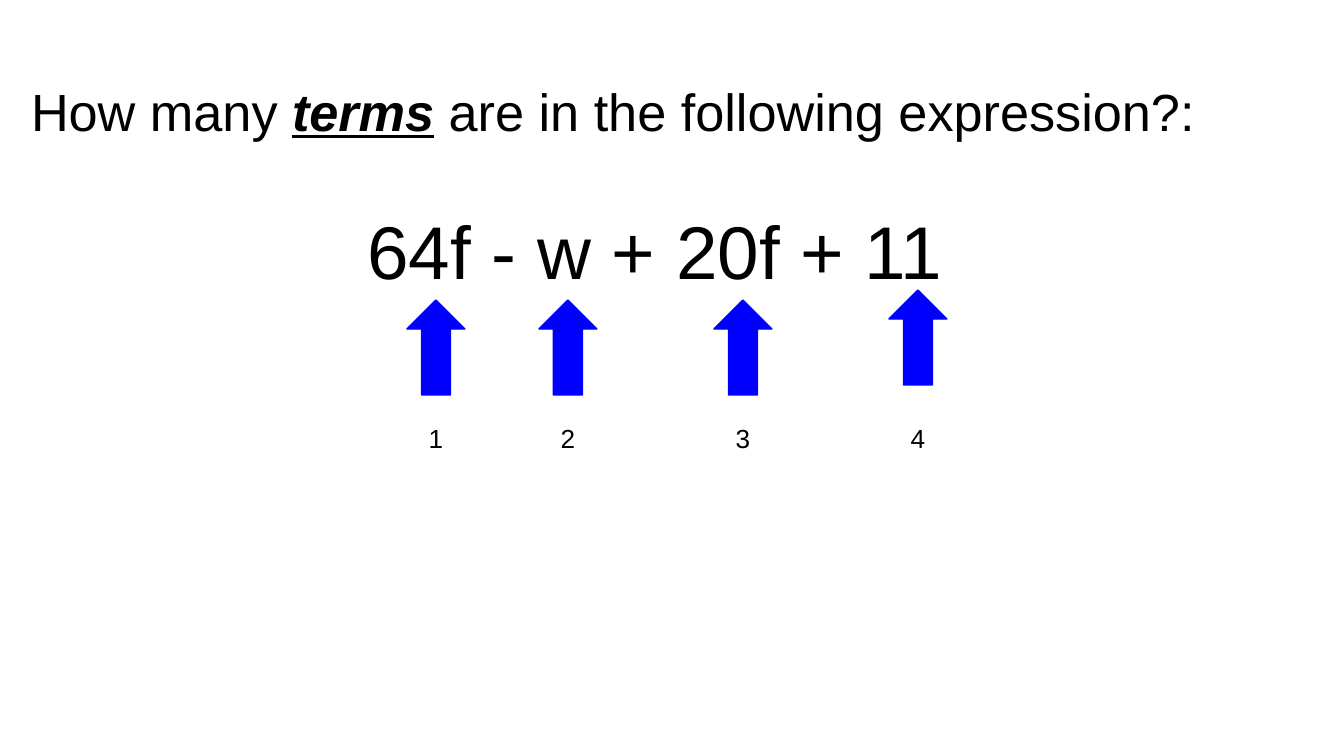
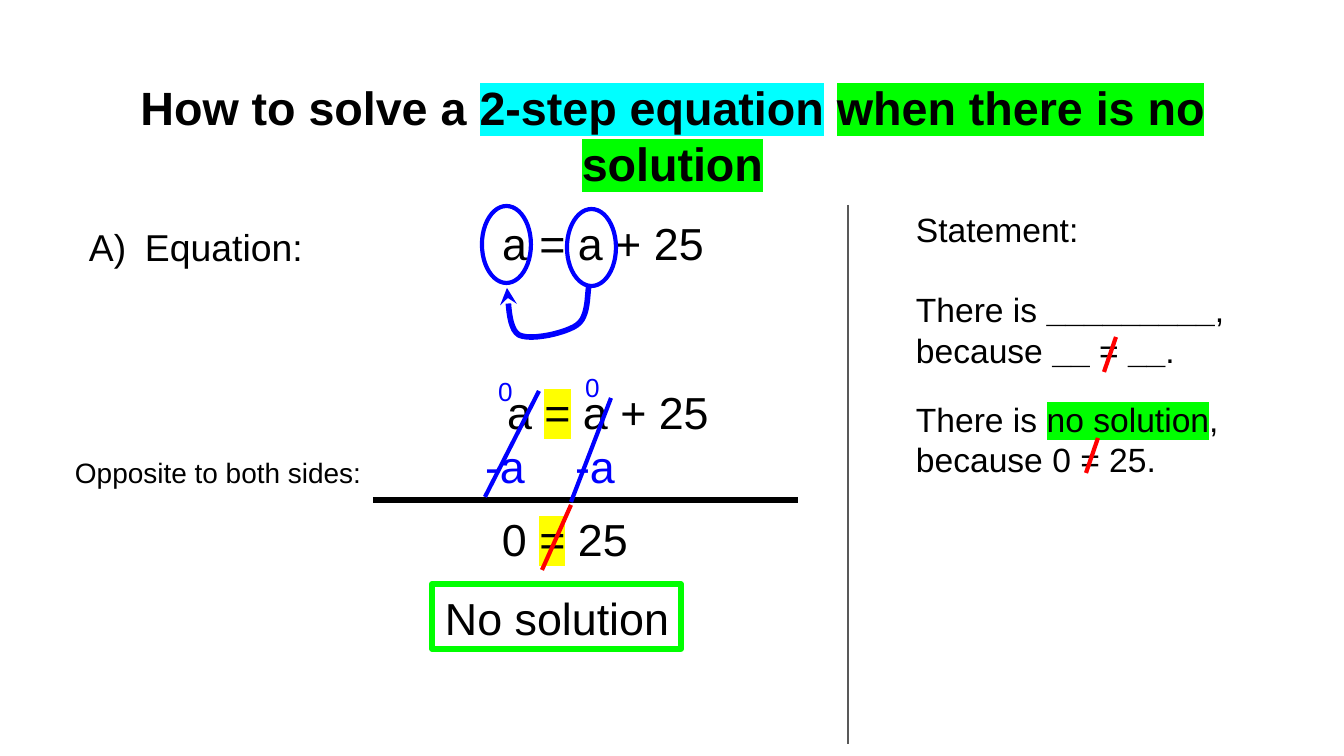
import pptx
import pptx.dml.color
import pptx.enum.shapes
import pptx.enum.text
import pptx.oxml
import pptx.oxml.ns
import pptx.util
from lxml import etree

EMU_PER_PX = 914400 / 134.4
FONT = "Arial"
LINE_SPACING = 1.0
INSET = 13
COLORS = {
    "ink": "000000", "blue": "0000FF", "red": "FF0000", "green": "00FF00",
    "cyan": "00FFFF", "yellow": "FFFF00", "gray": "595959", "paper": "FFFFFF",
}
SHAPES = pptx.enum.shapes.MSO_SHAPE
CENTER = pptx.enum.text.PP_ALIGN.CENTER


def px(length):
    return pptx.util.Emu(round(length * EMU_PER_PX))


def rgb(name):
    return pptx.dml.color.RGBColor.from_string(COLORS[name])


def add_xml(parent, tag, **attributes):
    return etree.SubElement(parent, pptx.oxml.ns.qn(tag), attributes)


# Text
def highlight_run(run, name):
    highlight = etree.Element(pptx.oxml.ns.qn("a:highlight"))
    add_xml(highlight, "a:srgbClr", val=COLORS[name])
    run.font.fill._xPr.find(pptx.oxml.ns.qn("a:solidFill")).addnext(highlight)


def add_run(paragraph, words, size=24, color="ink", bold=False, italic=False,
            underline=False, highlight=None):
    run = paragraph.add_run()
    run.text = words
    font = run.font
    font.name, font.size = FONT, pptx.util.Pt(size)
    font.bold, font.italic, font.underline = bold, italic, underline
    font.color.rgb = rgb(color)
    if highlight:
        highlight_run(run, highlight)


def add_text(slide, box, *paragraphs, align=None, gap=0, inset=INSET,
             lettered=False, **style):
    """Each paragraph is a string or a list of strings and (string, style) pairs."""
    frame = slide.shapes.add_textbox(*map(px, box)).text_frame
    frame.word_wrap = True
    frame.margin_left = frame.margin_right = px(inset)
    frame.margin_top = frame.margin_bottom = px(inset)
    for index, runs in enumerate(paragraphs):
        paragraph = frame.add_paragraph() if index else frame.paragraphs[0]
        paragraph.line_spacing = LINE_SPACING
        paragraph.alignment = CENTER if align == "center" or (align == "last" and index) else None
        if index:
            paragraph.space_before = px(gap)
        if lettered:
            properties = paragraph._p.get_or_add_pPr()
            properties.set("marL", str(px(67)))
            properties.set("indent", str(px(-56)))
            add_xml(properties, "a:buAutoNum", type="alphaUcParenR")
        for part in [runs] if isinstance(runs, str) else runs:
            words, own = (part, {}) if isinstance(part, str) else part
            add_run(paragraph, words, **{**style, **own})


# Lines and outlines
def add_line(slide, start, end, color, width=2.25):
    line = slide.shapes.add_connector(
        pptx.enum.shapes.MSO_CONNECTOR.STRAIGHT, *map(px, start + end))
    line.line.color.rgb = rgb(color)
    line.line.width = pptx.util.Pt(width)
    add_xml(line._element.spPr, "a:effectLst")


def dress(shape, color, width, fill=None):
    shape.shadow.inherit = False
    if fill:
        shape.fill.solid()
        shape.fill.fore_color.rgb = rgb(fill)
    else:
        shape.fill.background()
    shape.line.color.rgb = rgb(color)
    shape.line.width = pptx.util.Pt(width)


def add_outline(slide, kind, box, color, width, fill=None):
    dress(slide.shapes.add_shape(kind, *map(px, box)), color, width, fill)


def curve_points(start, curves, steps=12):
    for first, second, end in curves:
        for step in range(1, steps + 1):
            t = step / steps
            weights = (1 - t) ** 3, 3 * t * (1 - t) ** 2, 3 * t * t * (1 - t), t ** 3
            corners = start, first, second, end
            yield tuple(px(sum(w * c[axis] for w, c in zip(weights, corners)))
                        for axis in (0, 1))
        start = end


def add_curved_arrow(slide, start, curves, color, width):
    builder = slide.shapes.build_freeform(px(start[0]), px(start[1]))
    builder.add_line_segments(list(curve_points(start, curves)), close=False)
    arrow = builder.convert_to_shape()
    dress(arrow, color, width)
    add_xml(arrow.line._get_or_add_ln(), "a:tailEnd", type="stealth")


def add_slide(deck):
    slide = deck.slides.add_slide(deck.slide_layouts[6])
    slide.background.fill.solid()
    slide.background.fill.fore_color.rgb = rgb("paper")
    return slide


# Slide 1: counting terms
def build_terms(deck):
    slide = add_slide(deck)
    add_text(
        slide, (18, 66, 1274, 153),
        ["How many ", ("terms", dict(bold=True, italic=True, underline=True)),
         " are in the following expression?:"],
        [("64f - w + 20f + 11", dict(size=40))],
        size=28, align="last", gap=63)
    term_marks = [(407, 300), (539, 300), (714, 300), (889, 290)]
    for left, top in term_marks:
        add_outline(slide, SHAPES.UP_ARROW, (left, top, 58, 95), "blue", 0.75, "blue")
    for number, (left, _) in enumerate(term_marks, 1):
        add_text(slide, (left, 409, 58, 62), str(number), size=14, align="center")


# Slide 2: equation without a solution
def build_no_solution(deck):
    slide = add_slide(deck)
    equals = ("=", dict(highlight="yellow"))
    add_text(
        slide, (46, 66, 1253, 155),
        ["How to solve a ", ("2-step equation", dict(highlight="cyan")), " ",
         ("when there is no solution", dict(highlight="green"))],
        size=25, bold=True, align="center")

    # Equation with the variable moved across
    add_text(slide, (65, 211, 400, 76), "Equation:", size=20, lettered=True)
    add_text(slide, (489, 203, 350, 83), "a = a + 25")
    for left, top in [(482, 206), (567, 209)]:
        add_outline(slide, SHAPES.OVAL, (left, top, 49, 77), "blue", 2.25)
    add_curved_arrow(
        slide, (589, 286),
        [((587, 293), (589, 317), (577, 325)),
         ((566, 333), (531, 341), (519, 335)),
         ((507, 328), (509, 296), (507, 288))],
        "blue", 3)

    # Subtraction on both sides
    add_text(slide, (494, 372, 350, 77), ["a ", equals, " a + 25"])
    add_text(slide, (62, 443, 320, 60), "Opposite to both sides:", size=15)
    for left in (472, 562):
        add_text(slide, (left, 426, 75, 77), "-a", color="blue")
    add_line(slide, (373, 500), (798, 500), "ink", 3)
    for zero, bottom, top in [((498, 375), (485, 497), (539, 391)),
                              ((585, 371), (571, 502), (611, 398))]:
        add_line(slide, bottom, top, "blue")
        add_text(slide, zero + (17, 30), "0", size=14, color="blue", inset=0)

    # Result
    add_text(slide, (489, 499, 203, 77), ["0 ", equals, " 25"])
    add_line(slide, (542, 570), (571, 505), "red")
    add_text(slide, (432, 578, 265, 77), "No solution")
    add_outline(slide, SHAPES.RECTANGLE, (432, 584, 249, 65), "green", 3)

    # Statement column
    add_line(slide, (848, 205), (848, 744), "gray", 1.5)
    blank = dict(bold=True)
    add_text(
        slide, (903, 196, 356, 167), "Statement:",
        ["There is ", ("_________", blank), ", because ", ("__", blank), " = ",
         ("__", blank), "."],
        size=18, gap=40)
    add_text(
        slide, (903, 386, 356, 77),
        ["There is ", ("no solution", dict(highlight="green")), ", because 0 = 25."],
        size=18)
    for left, bottom in [(1104, 372), (1086, 473)]:
        add_line(slide, (left, bottom), (left + 12, bottom - 35), "red")


def main():
    deck = pptx.Presentation()
    deck.slide_width, deck.slide_height = px(1344), px(756)
    build_terms(deck)
    build_no_solution(deck)
    deck.save("out.pptx")


if __name__ == "__main__":
    main()
